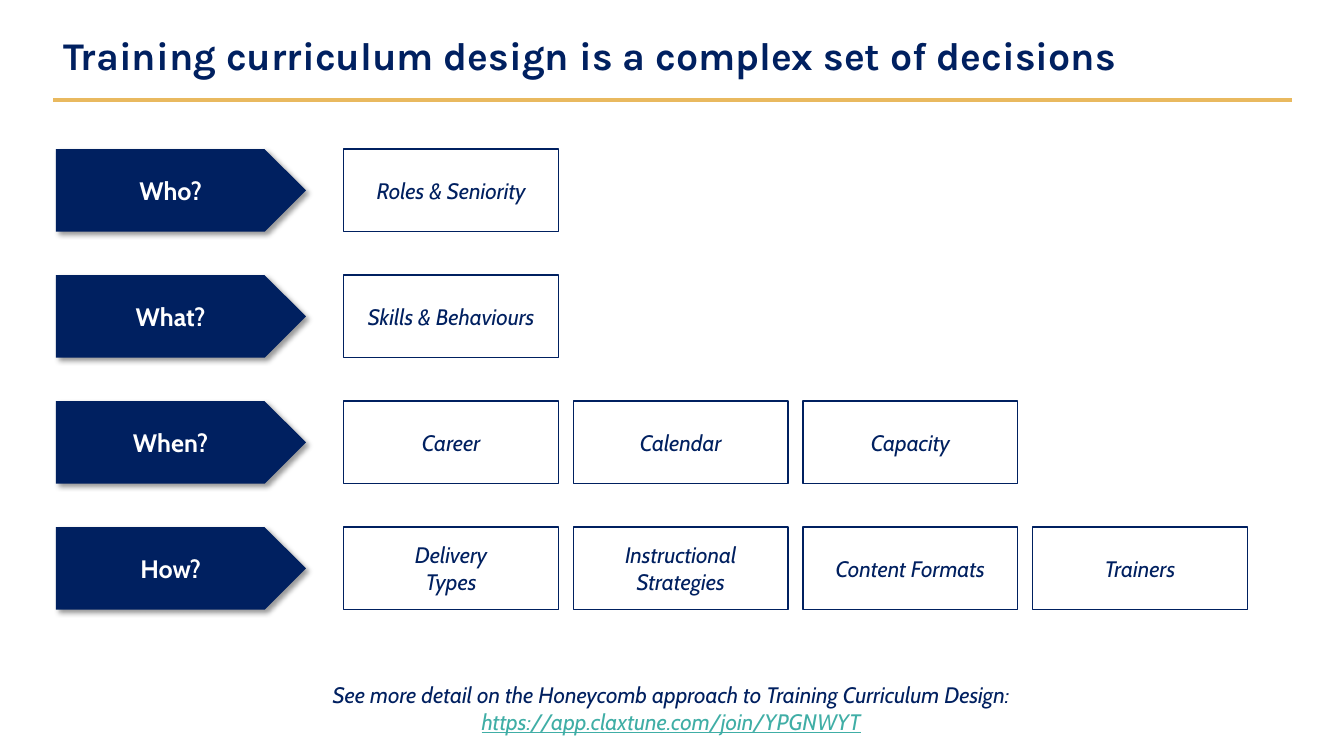
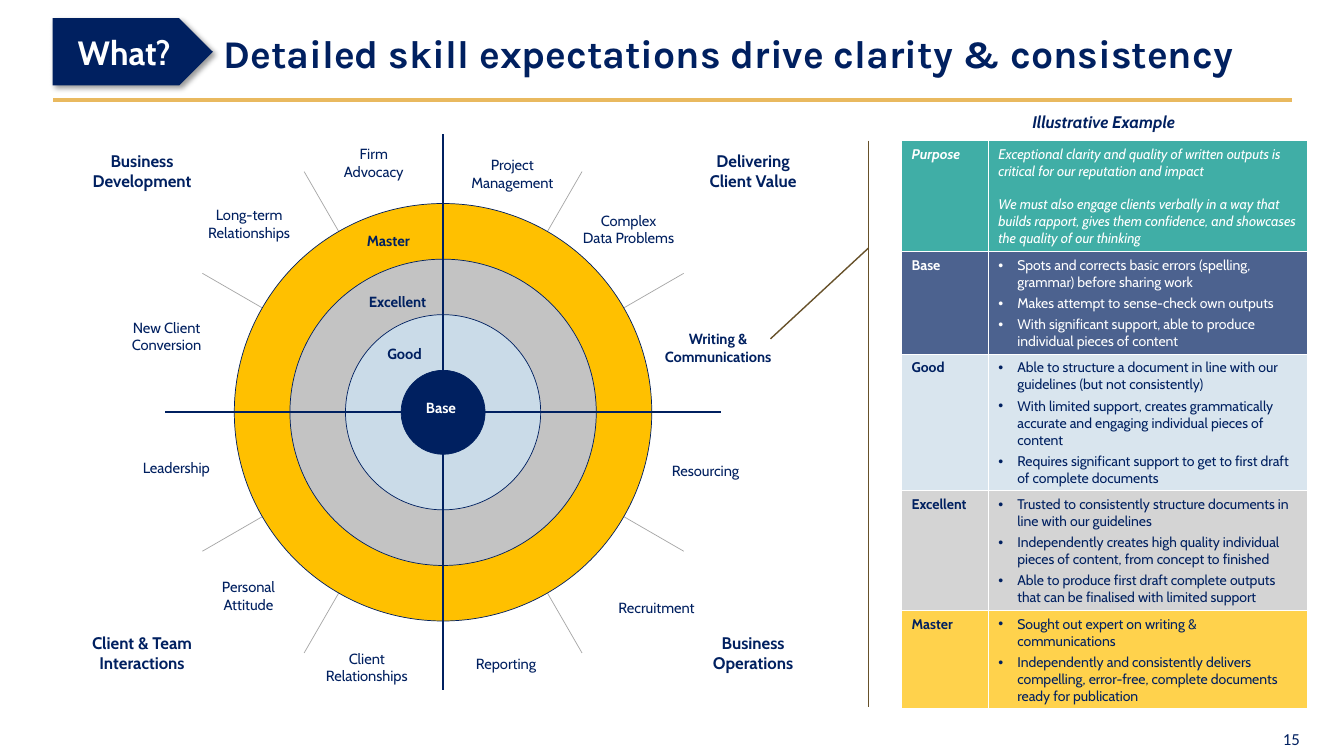
from math import cos, radians, sin

from lxml import etree
from pptx import Presentation
from pptx.dml.color import RGBColor
from pptx.enum.shapes import MSO_CONNECTOR, MSO_SHAPE
from pptx.enum.text import MSO_ANCHOR, PP_ALIGN
from pptx.oxml import parse_xml
from pptx.oxml.ns import nsdecls, qn
from pptx.util import Pt

# Theme: colours and type styles
THEME = {
    "navy": RGBColor(0x00, 0x20, 0x60),
    "white": RGBColor(0xFF, 0xFF, 0xFF),
    "teal": RGBColor(0x40, 0xAE, 0xA6),
    "gold": RGBColor(0xE9, 0xB9, 0x5F),
    "amber": RGBColor(0xFF, 0xC0, 0x00),
    "grey": RGBColor(0xC3, 0xC3, 0xC3),
    "pale": RGBColor(0xCA, 0xDB, 0xE8),
    "spoke": RGBColor(0xA6, 0xA6, 0xA6),
    "brown": RGBColor(0x67, 0x51, 0x2A),
    "title": {"name": "Karla", "size": Pt(28), "bold": True},
    "plate": {"name": "Cabin", "size": Pt(18), "bold": True},
    "tag": {"name": "Cabin", "size": Pt(24), "bold": True},
    "option": {"name": "Cabin", "size": Pt(16), "italic": True},
    "link": {"name": "Cabin", "size": Pt(16), "italic": True, "underline": True},
    "quadrant": {"name": "Cabin", "size": Pt(12), "bold": True},
    "caption": {"name": "Cabin", "size": Pt(12), "bold": True, "italic": True},
    "skill": {"name": "Cabin", "size": Pt(10.5)},
    "level": {"name": "Cabin", "size": Pt(10.5), "bold": True},
    "cell": {"name": "Cabin", "size": Pt(10)},
    "page": {"name": "Calibri", "size": Pt(12)},
}
NAVY, WHITE = THEME["navy"], THEME["white"]


def write(p, text, style, color=NAVY, align=PP_ALIGN.CENTER):
    p.text, p.alignment = text, align
    for r in p.runs:
        for name, value in THEME[style].items():
            setattr(r.font, name, value)
        r.font.color.rgb = color


def add_line(slide, x1, y1, x2, y2, color, width):
    ln = slide.shapes.add_connector(MSO_CONNECTOR.STRAIGHT, Pt(x1), Pt(y1), Pt(x2), Pt(y2))
    ln.line.color.rgb, ln.line.width = color, Pt(width)
    etree.SubElement(ln._element.spPr, qn("a:effectLst"))
    return ln


prs = Presentation()
prs.slide_width, prs.slide_height = Pt(960), Pt(540)
layout = prs.slide_layouts[5]

# Slides and titles
slides = []
for text, x, y, w in (
    ("Training curriculum design is a complex set of decisions", 38, 24, 867),
    ("Detailed skill expectations drive clarity & consistency", 152.5, 22.5, 780),
):
    s = prs.slides.add_slide(layout)
    title = s.shapes.title
    title.left, title.top, title.width, title.height = Pt(x), Pt(y), Pt(w), Pt(35)
    title.text_frame.vertical_anchor = MSO_ANCHOR.MIDDLE
    p = title.text_frame.paragraphs[0]
    write(p, text, "title", align=PP_ALIGN.LEFT)
    p.line_spacing = 0.9
    slides.append(s)
decisions, skills = slides

# Gold rule, held by the shared layout
rule = add_line(decisions, 38, 71.5, 923, 71.5, THEME["gold"], 3)
layout.shapes._spTree.append(rule._element)

# Decision rows: a question and its options
ROWS = {
    "Who?": ["Roles & Seniority"],
    "What?": ["Skills & Behaviours"],
    "When?": ["Career", "Calendar", "Capacity"],
    "How?": ["Delivery\vTypes", "Instructional Strategies", "Content Formats", "Trainers"],
}
TOP, ROW_STEP, ROW_H = 106.5, 90, 59
plates = [(skills, "What?", 37.5, 13, 114.5, 48, "tag")]
for row, (question, options) in enumerate(ROWS.items()):
    y = TOP + row * ROW_STEP
    plates.append((decisions, question, 40, y, 178.5, ROW_H, "plate"))
    for col, option in enumerate(options):
        sp = decisions.shapes.add_shape(
            MSO_SHAPE.RECTANGLE, Pt(245.5 + col * 164), Pt(y), Pt(153.5), Pt(ROW_H))
        sp.shadow.inherit = False
        sp.fill.background()
        sp.line.color.rgb, sp.line.width = NAVY, Pt(1)
        sp.text_frame.vertical_anchor = MSO_ANCHOR.MIDDLE
        write(sp.text_frame.paragraphs[0], option, "option")

# Arrow plates on both slides
SHADOW = (
    f'<a:effectLst {nsdecls("a")}><a:outerShdw blurRad="50800" dist="38100" dir="2700000" '
    'algn="tl" rotWithShape="0"><a:srgbClr val="000000"><a:alpha val="40000"/></a:srgbClr>'
    "</a:outerShdw></a:effectLst>"
)
for s, text, x, y, w, h, style in plates:
    sp = s.shapes.add_shape(MSO_SHAPE.PENTAGON, Pt(x), Pt(y), Pt(w), Pt(h))
    sp.fill.solid()
    sp.fill.fore_color.rgb = NAVY
    sp.line.fill.background()
    sp._element.spPr.append(parse_xml(SHADOW))
    sp.text_frame.vertical_anchor = MSO_ANCHOR.MIDDLE
    write(sp.text_frame.paragraphs[0], text, style, WHITE)

# Link to more detail
tf = decisions.shapes.add_textbox(Pt(152), Pt(483), Pt(655), Pt(46)).text_frame
tf.word_wrap = True
write(tf.paragraphs[0], "See more detail on the Honeycomb approach to Training Curriculum Design:", "option")
write(tf.add_paragraph(), "https://app.claxtune.com/join/YPGNWYT", "link", THEME["teal"])

# Skill wheel: spokes below the rings, axes below the hub
CX, CY, REACH, HUB, RING = 316.5, 294.5, 198.5, 30, 39.7
LAYERS = [
    ((30, 60, 120, 150), "spoke", 0.5, ((3, "amber"), (2, "grey"), (1, "pale"))),
    ((0, 90), "navy", 1.5, ((0, "navy"),)),
]
for angles, line_color, width, rings in LAYERS:
    for angle in angles:
        dx, dy = REACH * cos(radians(angle)), REACH * sin(radians(angle))
        add_line(skills, CX - dx, CY - dy, CX + dx, CY + dy, THEME[line_color], width)
    for ring, fill in rings:
        radius = HUB + ring * RING
        sp = skills.shapes.add_shape(
            MSO_SHAPE.OVAL, Pt(CX - radius), Pt(CY - radius), Pt(2 * radius), Pt(2 * radius))
        sp.shadow.inherit = False
        sp.fill.solid()
        sp.fill.fore_color.rgb = THEME[fill]
        sp.line.color.rgb, sp.line.width = NAVY, Pt(0.5)

# Labels: centre, top, text
LABEL_W, LABEL_H = 160, 23
LABELS = {
    "quadrant": [
        (538, 104.5, "Delivering\vClient Value"), (538, 449, "Business\vOperations"),
        (101.5, 449, "Client & Team\vInteractions"), (101.5, 104.5, "Business\vDevelopment"),
    ],
    "skill": [
        (366, 108.5, "Project\vManagement"), (449, 148, "Complex\vData Problems"),
        (504, 327, "Resourcing"), (469, 424.5, "Recruitment"), (361.5, 464.5, "Reporting"),
        (262, 461, "Client\vRelationships"), (177.5, 410, "Personal\vAttitude"),
        (126, 324.5, "Leadership"), (267, 100.5, "Firm\vAdvocacy"),
        (178, 144, "Long-term\vRelationships"), (119, 224.5, "New Client\vConversion"),
    ],
    "level": [
        (513, 232.5, "Writing &\vCommunications"), (277.5, 162.5, "Master"),
        (284, 206, "Excellent"), (289, 243, "Good"), (315, 282, "Base"),
    ],
    "caption": [(788.5, 77, "Illustrative Example")],
    "page": [(922.5, 520.5, "15")],
}
for style, labels in LABELS.items():
    for x, y, text in labels:
        tf = skills.shapes.add_textbox(
            Pt(x - LABEL_W / 2), Pt(y), Pt(LABEL_W), Pt(LABEL_H)).text_frame
        tf.word_wrap = False
        tf.margin_left = tf.margin_right = tf.margin_bottom = 0
        tf.margin_top = Pt(0 if style == "page" else 3)
        write(tf.paragraphs[0], text, style, WHITE if text == "Base" else NAVY)

# Callout from the skill to its table
sp = skills.shapes.add_shape(
    MSO_SHAPE.LINE_CALLOUT_1_ACCENT_BAR, Pt(643.5), Pt(100.5), Pt(291), Pt(404.5))
for i, value in enumerate((0.19, -0.08, 0.35, -0.32)):
    sp.adjustments[i] = value
sp.shadow.inherit = False
sp.fill.solid()
sp.fill.fore_color.rgb = WHITE
sp.line.color.rgb, sp.line.width = THEME["brown"], Pt(1)

# Table of expectations: level, fill, opacity %, text colour, row height, paragraphs
LEVELS = [
    ("Purpose", "teal", 100, WHITE, 79, [
        "Exceptional clarity and quality of written outputs is critical for our reputation and impact",
        "We must also engage clients verbally in a way that builds rapport, gives them confidence, "
        "and showcases the quality of our thinking"]),
    ("Base", "navy", 70, WHITE, 73, [
        "Spots and corrects basic errors (spelling, grammar) before sharing work",
        "Makes attempt to sense-check own outputs",
        "With significant support, able to produce individual pieces of content"]),
    ("Good", "pale", 70, NAVY, 97.5, [
        "Able to structure a document in line with our guidelines (but not consistently)",
        "With limited support, creates grammatically accurate and engaging individual pieces of content",
        "Requires significant support to get to first draft of complete documents"]),
    ("Excellent", "grey", 70, NAVY, 85.5, [
        "Trusted to consistently structure documents in line with our guidelines",
        "Independently creates high quality individual pieces of content, from concept to finished",
        "Able to produce first draft complete outputs that can be finalised with limited support"]),
    ("Master", "amber", 70, NAVY, 70, [
        "Sought out expert on writing & communications",
        "Independently and consistently delivers compelling, error-free, complete documents "
        "ready for publication"]),
]
table = skills.shapes.add_table(len(LEVELS), 2, Pt(644), Pt(100.5), Pt(290), Pt(405)).table
table.first_row = table.horz_banding = False
table.columns[0].width, table.columns[1].width = Pt(62), Pt(228)
for row, (level, fill, opacity, color, height, paragraphs) in enumerate(LEVELS):
    table.rows[row].height = Pt(height)
    purpose = level == "Purpose"
    for col, texts in enumerate(([level], paragraphs)):
        cell = table.cell(row, col)
        cell.fill.solid()
        cell.fill.fore_color.rgb = THEME[fill]
        tcPr = cell._tc.get_or_add_tcPr()
        rgb = tcPr.find(".//" + qn("a:srgbClr"))
        etree.SubElement(rgb, qn("a:alpha"), val=str(opacity * 1000))
        for i, side in enumerate("LRTB"):
            tcPr.insert(i, parse_xml(
                f'<a:ln{side} {nsdecls("a")} w="12700"><a:solidFill><a:srgbClr val="{WHITE}"/>'
                f"</a:solidFill></a:ln{side}>"))
        tf = cell.text_frame
        for i, text in enumerate(texts):
            p = tf.add_paragraph() if i else tf.paragraphs[0]
            write(p, text, "cell", color, PP_ALIGN.LEFT)
            p.runs[0].font.bold = col == 0
            p.runs[0].font.italic = purpose
            if purpose:
                p.space_before = Pt(12 * i)
            elif col:
                p.space_before = Pt(3)
                pPr = p._p.get_or_add_pPr()
                pPr.set("marL", str(Pt(13.5)))
                pPr.set("indent", str(-Pt(13.5)))
                for bullet in ('buFont typeface="Arial"', 'buChar char="•"'):
                    pPr.append(parse_xml(f'<a:{bullet} {nsdecls("a")}/>'))

prs.save("out.pptx")
